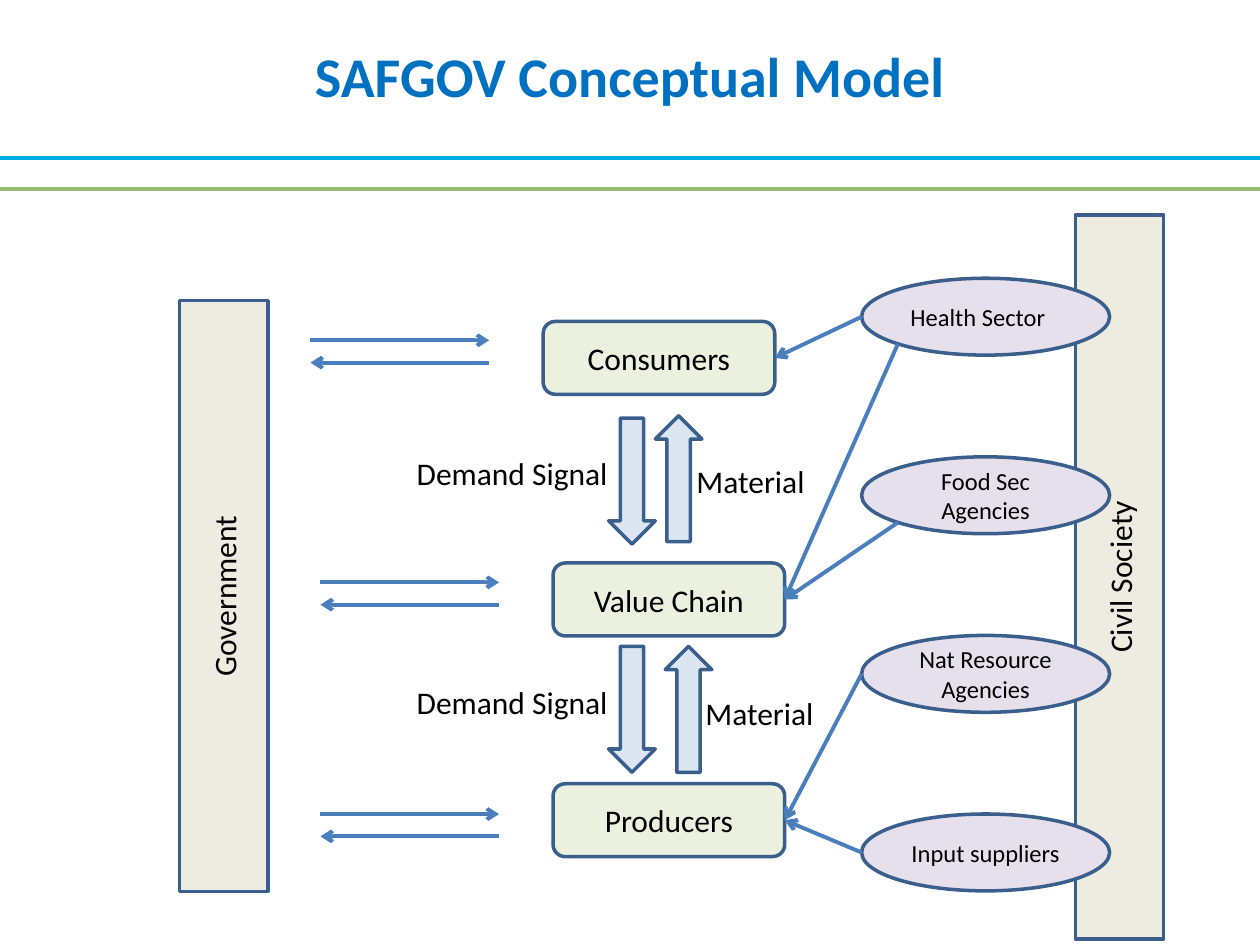
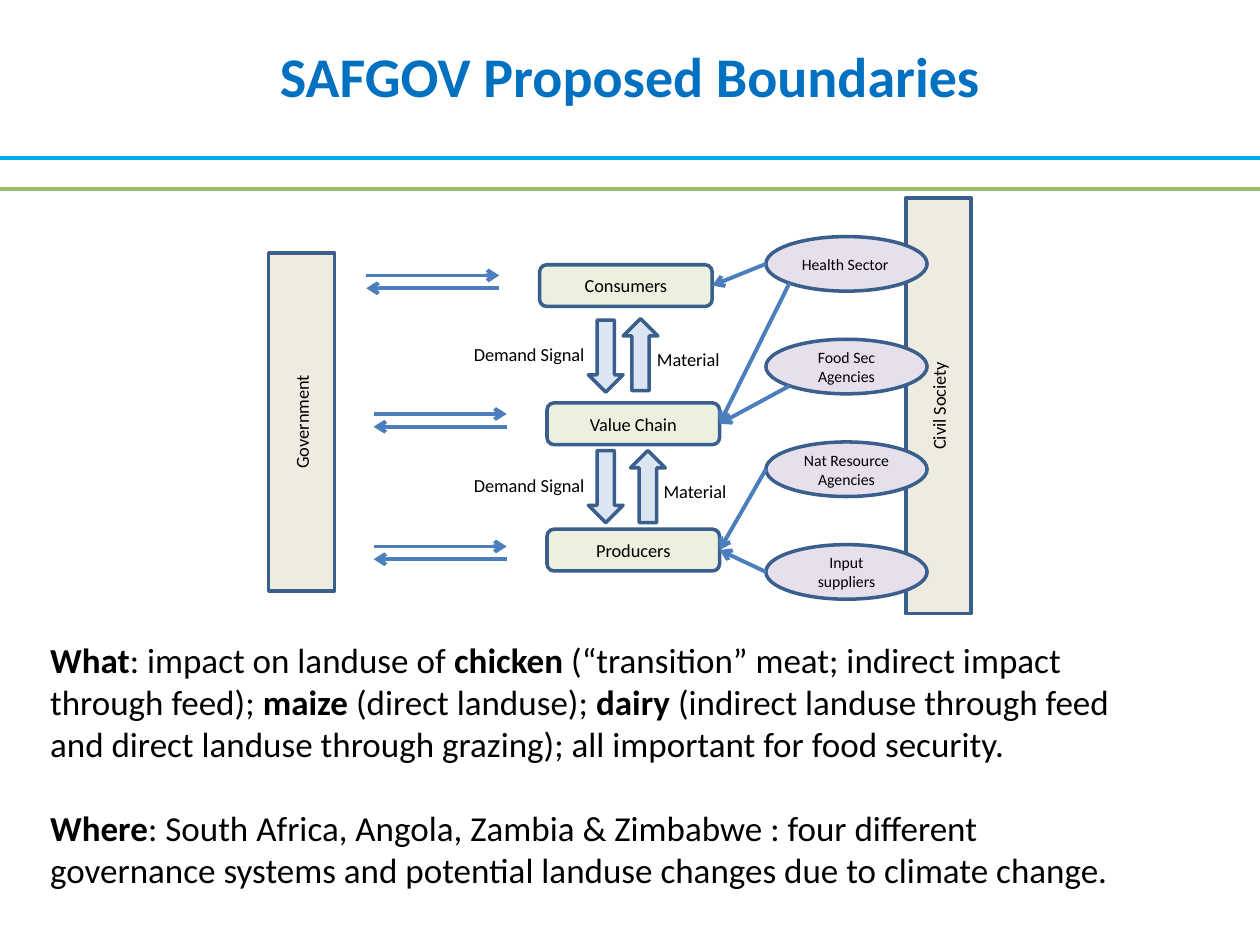
from dataclasses import dataclass

from lxml.etree import SubElement
from pptx import Presentation
from pptx.dml.color import RGBColor
from pptx.enum.shapes import MSO_CONNECTOR, MSO_SHAPE
from pptx.enum.text import MSO_ANCHOR, PP_ALIGN
from pptx.oxml.ns import qn
from pptx.util import Cm, Pt

FONT = "Calibri"
BLACK, TITLE_BLUE = "000000", "0070C0"
OUTLINE, FLOW = "3A5F8C", "4B7EBC"
STAGE_FILL, ACTOR_FILL, AGENCY_FILL, ARROW_FILL = "EBF1DE", "EEECE1", "E6E0EC", "DCE6F2"
PAGE_WIDTH, PAGE_HEIGHT = 25.4, 19.05
HEADER_RULES = [(3.81, "98BE71"), (3.18, "00ACE8")]


@dataclass
class Layout:
    x_offset: float
    y_offset: float
    x_scale: float
    y_scale: float
    agency_place: tuple
    agency_step: float
    society_place: tuple
    text_size: float
    agency_size: float

    def place(self, left, top, width, height):
        return (self.x_offset + left * self.x_scale, self.y_offset + top * self.y_scale,
                width * self.x_scale, height * self.y_scale)


LARGE = Layout(0, 0, 1, 1, (17.37, 5.61, 5, 1.55), 3.6, (21.68, 4.33, 1.78, 14.6), 18, 14)
SMALL = Layout(2.72, 1.63, 0.745, 0.572, (15.44, 4.77, 3.25, 1.1), 2.07,
               (18.26, 3.99, 1.32, 8.38), 10.5, 9)

SLIDES = [("SAFGOV Conceptual Model", LARGE), ("SAFGOV Proposed Boundaries", SMALL)]

STAGE_SIZE = (4.67, 1.47)
STAGES = [
    ("Consumers", 10.95, 6.48, 6.86),
    ("Value Chain", 11.15, 11.35, 11.74),
    ("Producers", 11.15, 15.8, 16.41),
]
EXCHANGE_OFFSET, EXCHANGE_LENGTH, EXCHANGE_GAP = 4.69, 3.6, 0.45
GOVERNMENT_PLACE = (3.62, 6.06, 1.78, 11.91)

BLOCK_ARROW_SIZE = (0.94, 2.54)
DOWN_ARROWS = [(12.27, 8.43), (12.27, 13.03)]
UP_ARROWS = [(13.21, 8.38), (13.41, 13.03)]
FLOW_LABELS = [
    ("Demand Signal", PP_ALIGN.RIGHT, (4.5, 1.8), [(8.0, 9.02), (8.0, 13.64)]),
    ("Material", PP_ALIGN.LEFT, (2.75, 1.02), [(13.79, 9.19), (13.97, 13.87)]),
]

AGENCIES = [
    ("Health Sector", PP_ALIGN.LEFT),
    ("Food Sec Agencies", PP_ALIGN.CENTER),
    ("Nat Resource Agencies", PP_ALIGN.CENTER),
    ("Input suppliers", PP_ALIGN.CENTER),
]
LEFT_EDGE, LOWER_LEFT = (0, 0.5), (0.146, 0.854)
INFLUENCES = [
    ("Health Sector", LEFT_EDGE, "Consumers"),
    ("Health Sector", LOWER_LEFT, "Value Chain"),
    ("Food Sec Agencies", LOWER_LEFT, "Value Chain"),
    ("Nat Resource Agencies", LEFT_EDGE, "Producers"),
    ("Input suppliers", LEFT_EDGE, "Producers"),
]

SCOPE = [
    [("What", True), (": impact on landuse of ", False), ("chicken", True),
     (" (“transition” meat; indirect impact through feed); ", False), ("maize", True),
     (" (direct landuse); ", False), ("dairy", True),
     (" (indirect landuse through feed and direct landuse through grazing); "
      "all important for food security.", False)],
    [("Where", True),
     (": South Africa, Angola, Zambia & Zimbabwe : four different governance systems "
      "and potential landuse changes due to climate change.", False)],
]


def color(value):
    return RGBColor.from_string(value)


def lengths(values):
    return [Cm(value) for value in values]


def format_span(span, size, shade=BLACK, bold=False):
    span.font.name = FONT
    span.font.size = Pt(size)
    span.font.bold = bold
    span.font.color.rgb = color(shade)


def write(box, text, size, align, anchor=MSO_ANCHOR.MIDDLE, shade=BLACK, bold=False):
    frame = box.text_frame
    frame.text = text
    frame.word_wrap = True
    frame.vertical_anchor = anchor
    para = frame.paragraphs[0]
    para.alignment = align
    format_span(para.runs[0], size, shade, bold)


def add_outlined(canvas, kind, place, fill):
    shape = canvas.add_shape(kind, *lengths(place))
    shape.shadow.inherit = False
    shape.fill.solid()
    shape.fill.fore_color.rgb = color(fill)
    shape.line.color.rgb = color(OUTLINE)
    shape.line.width = Pt(2)
    return shape


def add_line(canvas, start, end, shade, width, arrow=False):
    line = canvas.add_connector(MSO_CONNECTOR.STRAIGHT, *lengths((*start, *end)))
    line.line.color.rgb = color(shade)
    line.line.width = Pt(width)
    if arrow:
        SubElement(line.line._get_or_add_ln(), qn("a:tailEnd"), type="arrow")
    SubElement(line._element.spPr, qn("a:effectLst"))


def add_flow(canvas, start, end):
    add_line(canvas, start, end, FLOW, 2.25, arrow=True)


def add_upright_bar(canvas, name, place, size):
    left, top, width, height = place
    turned = (left + (width - height) / 2, top + (height - width) / 2, height, width)
    bar = add_outlined(canvas, MSO_SHAPE.RECTANGLE, turned, ACTOR_FILL)
    bar.rotation = 270
    write(bar, name, size, PP_ALIGN.CENTER)


def add_value_chain(canvas, layout):
    for spots, angle in [(DOWN_ARROWS, 0), (UP_ARROWS, 180)]:
        for spot in spots:
            arrow = add_outlined(canvas, MSO_SHAPE.DOWN_ARROW,
                                 layout.place(*spot, *BLOCK_ARROW_SIZE), ARROW_FILL)
            arrow.rotation = angle
    for text, align, size, spots in FLOW_LABELS:
        for spot in spots:
            label = canvas.add_textbox(*lengths(layout.place(*spot, *size)))
            write(label, text, layout.text_size, align, MSO_ANCHOR.TOP)

    places = {}
    for name, left, top, exchange_top in STAGES:
        places[name] = layout.place(left, top, *STAGE_SIZE)
        stage = add_outlined(canvas, MSO_SHAPE.ROUNDED_RECTANGLE, places[name], STAGE_FILL)
        write(stage, name, layout.text_size, PP_ALIGN.CENTER)
        x, y, length, gap = layout.place(left - EXCHANGE_OFFSET, exchange_top,
                                         EXCHANGE_LENGTH, EXCHANGE_GAP)
        add_flow(canvas, (x, y), (x + length, y))
        add_flow(canvas, (x + length, y + gap), (x, y + gap))
    return places


def add_agencies(canvas, layout, stage_places):
    left, top, width, height = layout.agency_place
    tops = {}
    for row, (name, align) in enumerate(AGENCIES):
        tops[name] = top + row * layout.agency_step
        agency = add_outlined(canvas, MSO_SHAPE.OVAL, (left, tops[name], width, height),
                              AGENCY_FILL)
        agency.text_frame.margin_top = agency.text_frame.margin_bottom = Cm(0)
        write(agency, name, layout.agency_size, align)
    for name, (across, down), stage in INFLUENCES:
        stage_left, stage_top, stage_width, stage_height = stage_places[stage]
        add_flow(canvas, (left + across * width, tops[name] + down * height),
                 (stage_left + stage_width, stage_top + stage_height / 2))


def add_model(canvas, layout):
    stage_places = add_value_chain(canvas, layout)
    add_upright_bar(canvas, "Government", layout.place(*GOVERNMENT_PLACE), layout.text_size)
    add_upright_bar(canvas, "Civil Society", layout.society_place, layout.text_size)
    add_agencies(canvas, layout, stage_places)


def add_header(page, title):
    box = page.shapes.add_textbox(*lengths((1.27, -0.08, 22.86, 3.18)))
    write(box, title, 32, PP_ALIGN.CENTER, shade=TITLE_BLUE, bold=True)
    for y, shade in HEADER_RULES:
        add_line(page.shapes, (0, y), (PAGE_WIDTH, y), shade, 2)


def add_scope(page):
    frame = page.shapes.add_textbox(*lengths((0.76, 12.75, 22.33, 5.38))).text_frame
    frame.word_wrap = True
    for index, parts in enumerate(SCOPE):
        para = frame.add_paragraph() if index else frame.paragraphs[0]
        para.space_before = Pt(24 if index else 0)
        for text, bold in parts:
            span = para.add_run()
            span.text = text
            format_span(span, 20, bold=bold)


def main():
    deck = Presentation()
    deck.slide_width, deck.slide_height = Cm(PAGE_WIDTH), Cm(PAGE_HEIGHT)
    for title, layout in SLIDES:
        page = deck.slides.add_slide(deck.slide_layouts[6])
        grouped = layout is SMALL
        canvas = page.shapes.add_group_shape().shapes if grouped else page.shapes
        add_model(canvas, layout)
        add_header(page, title)
        if grouped:
            add_scope(page)
    deck.save("out.pptx")


if __name__ == "__main__":
    main()
